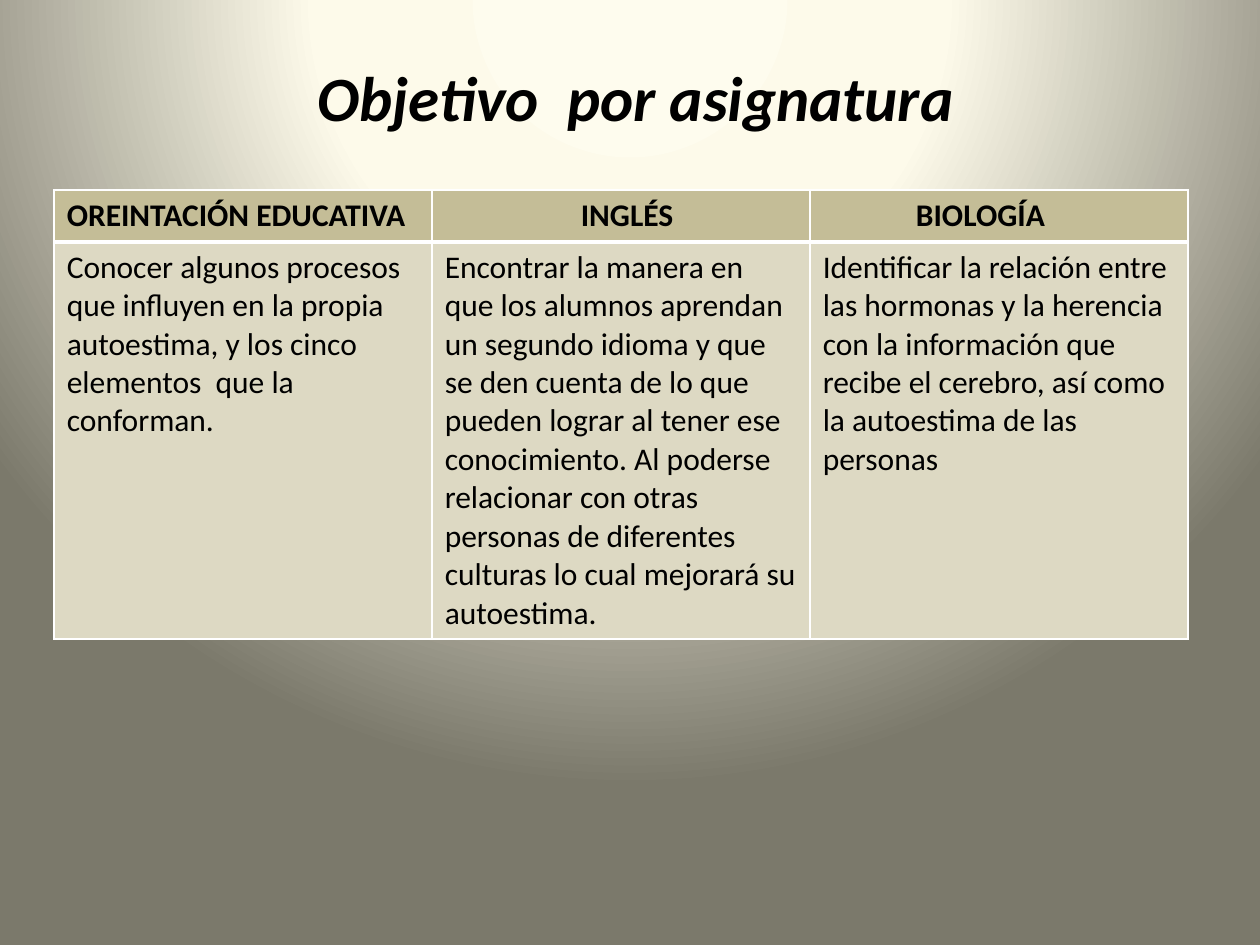
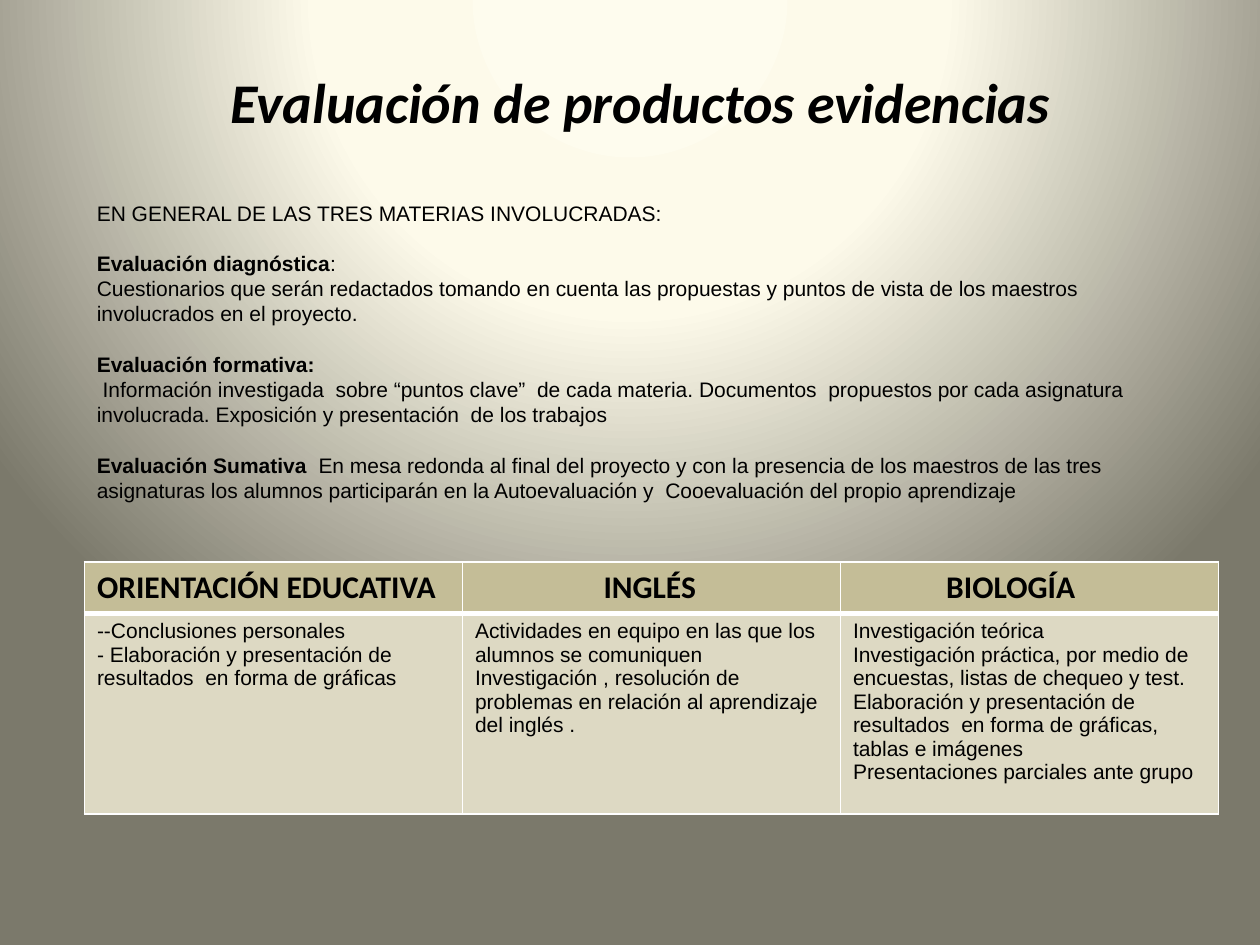
from lxml.etree import SubElement
from pptx import Presentation
from pptx.dml.color import RGBColor
from pptx.enum.text import MSO_ANCHOR as Anchor, PP_ALIGN as Align
from pptx.oxml.ns import qn
from pptx.util import Inches, Pt

COLORS = {
    "text": "000000",
    "header": "C4BD97",
    "body": "DDD9C3",
    "border": "FFFFFF",
    "glow": "FEFCEE",
    "cream": "FDFAEA",
    "olive": "7B796B",
}
BACKGROUND_STOPS = [(0, "glow"), (40, "cream"), (100, "olive")]
BACKGROUND_CENTER = {"l": 50, "t": -80, "r": 50, "b": 180}
COLUMN_WIDTH = 3
HEADER_HEIGHT = 0.41
CELL_MARGIN = 0.1


def add_run(paragraph, text, font="Calibri", size=18, bold=False, italic=False):
    run = paragraph.add_run()
    run.text = text
    run.font.name = font
    run.font.size = Pt(size)
    run.font.bold = bold
    run.font.italic = italic
    run.font.color.rgb = RGBColor.from_string(COLORS["text"])


def next_paragraph(frame, index):
    return frame.paragraphs[0] if index == 0 else frame.add_paragraph()


def add_color(parent, color):
    SubElement(parent, qn("a:srgbClr"), val=COLORS[color])


class Deck:
    """Holds the shared style and the slide being filled."""

    def __init__(self):
        self.presentation = Presentation()
        self.presentation.slide_width = Inches(10)
        self.presentation.slide_height = Inches(7.5)
        self.slide = None

    def new_slide(self):
        self.slide = self.presentation.slides.add_slide(self.presentation.slide_layouts[6])
        self.slide.background.fill.gradient()
        gradient = next(self.slide.element.iter(qn("a:gradFill")))
        for child in list(gradient):
            gradient.remove(child)
        stops = SubElement(gradient, qn("a:gsLst"))
        for position, color in BACKGROUND_STOPS:
            add_color(SubElement(stops, qn("a:gs"), pos=str(position * 1000)), color)
        circle = SubElement(gradient, qn("a:path"), path="circle")
        center = {side: str(value * 1000) for side, value in BACKGROUND_CENTER.items()}
        SubElement(circle, qn("a:fillToRect"), **center)

    def text_frame(self, left, top, width, height):
        box = self.slide.shapes.add_textbox(*map(Inches, (left, top, width, height)))
        box.text_frame.word_wrap = True
        return box.text_frame

    def title(self, text, left, width, height, size):
        frame = self.text_frame(left, 0.3, width, height)
        frame.vertical_anchor = Anchor.MIDDLE
        heading = frame.paragraphs[0]
        heading.alignment = Align.CENTER
        add_run(heading, text, size=size, bold=True, italic=True)

    def sections(self, sections, left, top, width, height, line):
        """Each section is a list of paragraphs; a paragraph is a list of (text, bold)."""
        frame = self.text_frame(left, top, width, height)
        paragraphs = [(runs, number > 0 and position == 0)
                      for number, section in enumerate(sections)
                      for position, runs in enumerate(section)]
        for index, (runs, starts_section) in enumerate(paragraphs):
            paragraph = next_paragraph(frame, index)
            paragraph.line_spacing = Pt(line)
            if starts_section:
                paragraph.space_before = Pt(line)
            for text, bold in runs:
                add_run(paragraph, text, font="Arial", size=12, bold=bold)

    def borders(self, cell, **widths):
        properties = cell._tc.get_or_add_tcPr()
        for side in "LRTB":
            line = SubElement(properties, qn(f"a:ln{side}"), w=str(Pt(widths.get(side, 1))))
            add_color(SubElement(line, qn("a:solidFill")), "border")

    def cell(self, cell, paragraphs, color, line=None, **style):
        cell.fill.solid()
        cell.fill.fore_color.rgb = RGBColor.from_string(COLORS[color])
        for index, text in enumerate(paragraphs):
            paragraph = next_paragraph(cell.text_frame, index)
            if line:
                paragraph.line_spacing = Pt(line)
            add_run(paragraph, text, **style)

    def subject_table(self, subjects, left, top, body_height, **body_style):
        """Each subject is (name, indent of the name, paragraphs)."""
        table = self.slide.shapes.add_table(
            2, len(subjects), Inches(left), Inches(top),
            Inches(COLUMN_WIDTH * len(subjects)), Inches(HEADER_HEIGHT + body_height)).table
        table.rows[0].height = Inches(HEADER_HEIGHT)
        table.rows[1].height = Inches(body_height)
        for column, (name, indent, paragraphs) in enumerate(subjects):
            table.columns[column].width = Inches(COLUMN_WIDTH)
            header, body = table.cell(0, column), table.cell(1, column)
            self.borders(header, B=3)
            self.borders(body, T=3)
            header.margin_left = Inches(CELL_MARGIN + indent)
            self.cell(header, [name], "header", bold=True)
            self.cell(body, paragraphs, "body", **body_style)


def objectives(deck):
    deck.new_slide()
    deck.title("Objetivo  por asignatura", 0.59, 8.91, 0.93, size=36)
    deck.subject_table([
        ("OREINTACIÓN EDUCATIVA", 0, [
            "Conocer algunos procesos que influyen en la propia autoestima, "
            "y los cinco elementos  que la conforman."]),
        ("INGLÉS", 1.08, [
            "Encontrar la manera en que los alumnos aprendan un segundo idioma y que se den "
            "cuenta de lo que pueden lograr al tener ese conocimiento. Al poderse relacionar "
            "con otras personas de diferentes culturas lo cual mejorará su autoestima."]),
        ("BIOLOGÍA", 0.74, [
            "Identificar la relación entre las hormonas y la herencia con la información que "
            "recibe el cerebro, así como la autoestima de las personas"]),
    ], left=0.43, top=1.51, body_height=3.15)


def evaluation(deck):
    deck.new_slide()
    deck.title("Evaluación de productos evidencias", 0.67, 8.83, 1.01, size=32)
    deck.subject_table([
        ("ORIENTACIÓN EDUCATIVA", 0, [
            "--Conclusiones personales",
            "- Elaboración y presentación de resultados  en forma de gráficas"]),
        ("INGLÉS", 1.02, [
            "Actividades en equipo en las que los alumnos se comuniquen",
            "Investigación , resolución de problemas en relación al aprendizaje del inglés ."]),
        ("BIOLOGÍA", 0.74, [
            "Investigación teórica",
            "Investigación práctica, por medio de encuestas, listas de chequeo y test.",
            "Elaboración y presentación de resultados  en forma de gráficas, tablas e imágenes",
            "Presentaciones parciales ante grupo"]),
    ], left=0.67, top=4.46, body_height=1.59, font="Arial", size=12, line=13.4)
    deck.sections([
        [[("EN GENERAL DE LAS TRES MATERIAS INVOLUCRADAS:", False)]],
        [[("Evaluación diagnóstica", True), (":", False)],
         [("Cuestionarios que serán redactados tomando en cuenta las propuestas y puntos de "
           "vista de los maestros involucrados en el proyecto.", False)]],
        [[("Evaluación formativa:", True)],
         [(" Información investigada  sobre “puntos clave”  de cada materia. Documentos  "
           "propuestos por cada asignatura  involucrada. Exposición y presentación  de los "
           "trabajos", False)]],
        [[("Evaluación Sumativa  ", True),
          ("En mesa redonda al final del proyecto y con la presencia de los maestros de las "
           "tres asignaturas los alumnos participarán en la Autoevaluación y  Cooevaluación "
           "del propio aprendizaje", False)]],
    ], left=0.67, top=1.54, width=8.9, height=2.83, line=14.4)


def main():
    deck = Deck()
    objectives(deck)
    evaluation(deck)
    deck.presentation.save("out.pptx")


if __name__ == "__main__":
    main()
